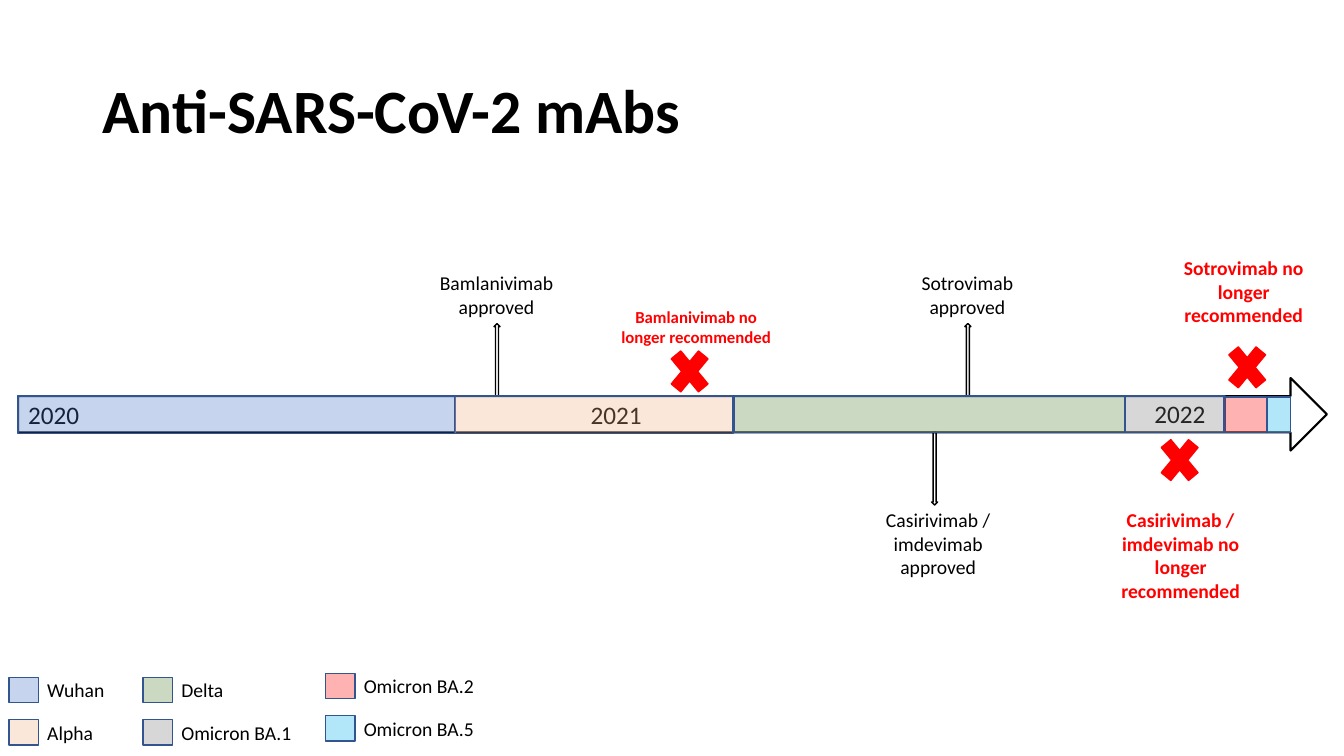
from lxml import etree
from pptx import Presentation
from pptx import util as u
from pptx.dml.color import RGBColor
from pptx.enum import shapes, text
from pptx.oxml.ns import qn

COLOURS = {
    "text": "000000",
    "withdrawn": "FF0000",
    "outline": "325491",
    "Wuhan": "4472C4",
    "Alpha": "F4B183",
    "Delta": "548235",
    "Omicron BA.1": "7C7C7C",
    "Omicron BA.2": "FF0000",
    "Omicron BA.5": "00B0F0",
}


class TimelineSlide:
    font = "Calibri"

    def __init__(self, slide):
        self.slide = slide

    def colour(self, name):
        return RGBColor.from_string(COLOURS[name])

    def shape(self, kind, box, line, weight=1, fill=None, alpha=None):
        shape = self.slide.shapes.add_shape(kind, *map(u.Inches, box))
        shape.shadow.inherit = False
        shape.line.color.rgb = self.colour(line)
        shape.line.width = u.Pt(weight)
        if fill is None:
            shape.fill.background()
        else:
            shape.fill.solid()
            shape.fill.fore_color.rgb = self.colour(fill)
        if alpha is not None:
            colour = shape._element.spPr.find(qn("a:solidFill"))[0]
            etree.SubElement(colour, qn("a:alpha")).set("val", str(alpha * 1000))
        return shape

    def label(self, words, box, size=14, colour="text", bold=False,
              centred=False, wrap=True):
        label = self.slide.shapes.add_textbox(*map(u.Inches, box))
        frame = label.text_frame
        frame.text = words
        frame.word_wrap = wrap
        frame.auto_size = text.MSO_AUTO_SIZE.SHAPE_TO_FIT_TEXT
        paragraph = frame.paragraphs[0]
        paragraph.alignment = text.PP_ALIGN.CENTER if centred else text.PP_ALIGN.LEFT
        font = paragraph.runs[0].font
        font.name = self.font
        font.size = u.Pt(size)
        font.bold = bold
        font.color.rgb = self.colour(colour)
        return frame

    def title(self, words, box):
        frame = self.label(words, box, size=44, bold=True)
        frame.auto_size = text.MSO_AUTO_SIZE.NONE
        frame.vertical_anchor = text.MSO_ANCHOR.MIDDLE
        frame.paragraphs[0].line_spacing = 0.9

    def axis(self, box):
        self.shape(shapes.MSO_SHAPE.RIGHT_ARROW, box, "text", 1.5)

    def approval(self, words, label_box, arrow, left, top):
        self.shape(arrow, (left, top, 0.06, 0.72), "text")
        self.label(words, label_box, centred=True)

    def withdrawal(self, words, label_box, left, top, size=14):
        self.shape(shapes.MSO_SHAPE.MATH_MULTIPLY, (left, top, 0.52, 0.63),
                   "withdrawn", fill="withdrawn")
        self.label(words, label_box, size, "withdrawn", bold=True, centred=True)

    def variant(self, name, box):
        self.shape(shapes.MSO_SHAPE.RECTANGLE, box, "outline", fill=name, alpha=30)

    def legend_entry(self, name, left, top, width):
        self.variant(name, (left, top, 0.29, 0.25))
        self.label(name, (left + 0.28, top - 0.04, width, 0.34), wrap=False)


def main():
    deck = Presentation()
    deck.slide_width, deck.slide_height = u.Inches(13.33), u.Inches(7.5)
    page = TimelineSlide(deck.slides.add_slide(deck.slide_layouts[6]))

    page.title("Anti-SARS-CoV-2 mAbs", (0.92, 0.4, 11.5, 1.45))
    page.axis((0.18, 3.75, 12.98, 0.72))
    for year, left, top in (("2020", 0.18, 3.91), ("2021", 5.76, 3.91),
                            ("2022", 11.35, 3.9)):
        page.label(year, (left, top, 0.71, 0.4), size=18, wrap=False)

    up, down = shapes.MSO_SHAPE.UP_ARROW, shapes.MSO_SHAPE.DOWN_ARROW
    for words, label_box, arrow, left, top in (
        ("Bamlanivimab approved", (4.26, 2.64, 1.33, 0.57), up, 4.9, 3.21),
        ("Casirivimab / imdevimab approved", (8.64, 4.99, 1.33, 0.81), down, 9.24, 4.29),
        ("Sotrovimab approved", (8.93, 2.64, 1.33, 0.57), up, 9.57, 3.21),
    ):
        page.approval(words, label_box, arrow, left, top)

    for words, label_box, left, top, size in (
        ("Bamlanivimab no longer recommended", (5.99, 2.99, 1.83, 0.5), 6.58, 3.37, 12),
        ("Casirivimab / imdevimab no longer recommended",
         (10.85, 4.99, 1.72, 1.04), 11.44, 4.25, 14),
        ("Sotrovimab no longer recommended", (11.64, 2.49, 1.39, 0.81), 12.11, 3.33, 14),
    ):
        page.withdrawal(words, label_box, left, top, size)

    for name, box in (
        ("Wuhan", (0.18, 3.93, 4.34, 0.37)),
        ("Alpha", (4.51, 3.93, 2.76, 0.37)),
        ("Delta", (7.28, 3.93, 3.88, 0.36)),
        ("Omicron BA.1", (11.16, 3.93, 0.99, 0.36)),
        ("Omicron BA.2", (12.14, 3.94, 0.42, 0.35)),
        ("Omicron BA.5", (12.57, 3.94, 0.23, 0.35)),
    ):
        page.variant(name, box)

    for left, top, entries in (
        (0.09, 6.72, (("Wuhan", 0.78), ("Alpha", 0.66))),
        (1.42, 6.72, (("Delta", 0.63), ("Omicron BA.1", 1.34))),
        (3.23, 6.68, (("Omicron BA.2", 1.34), ("Omicron BA.5", 1.34))),
    ):
        for row, (name, width) in enumerate(entries):
            page.legend_entry(name, left, top + 0.42 * row, width)

    deck.save("out.pptx")


if __name__ == "__main__":
    main()
